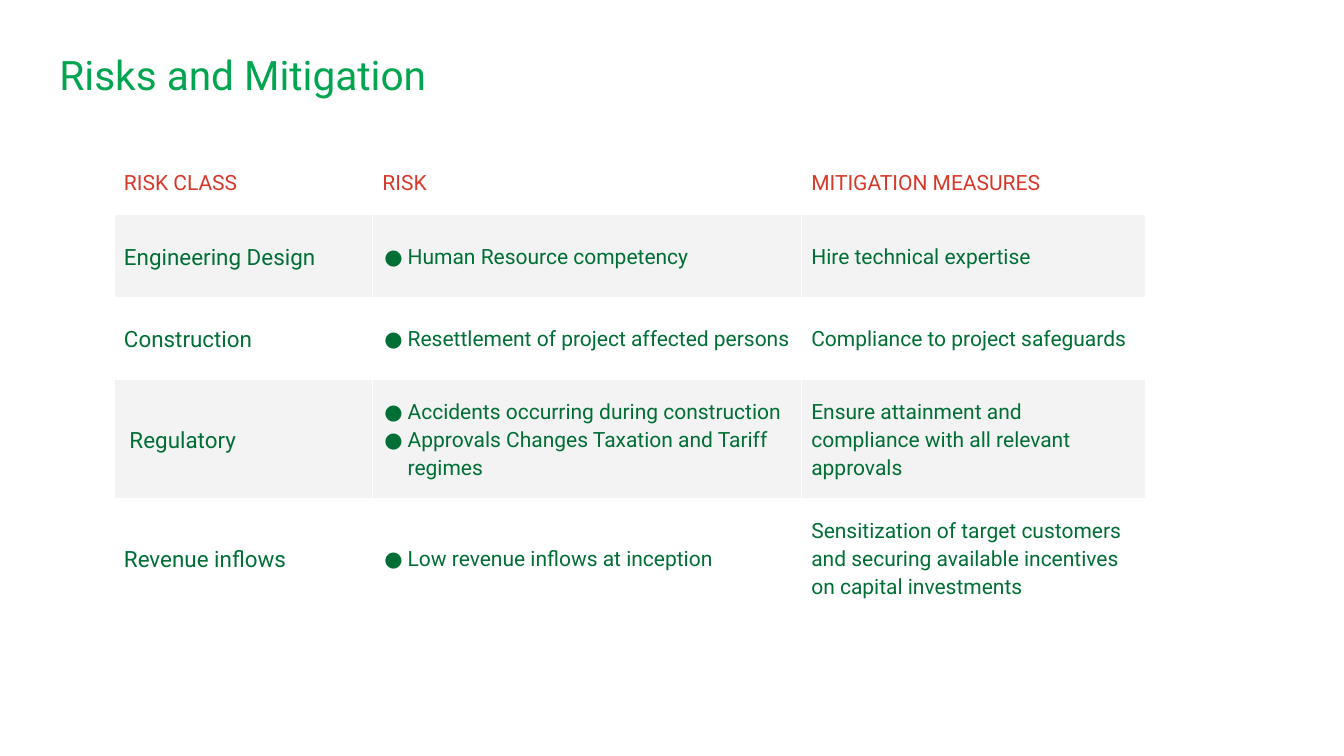
"""Build the Risks and Mitigation slide with its table of risk classes."""
from dataclasses import dataclass

from lxml import etree
from pptx import Presentation
from pptx.dml.color import RGBColor
from pptx.enum.text import MSO_ANCHOR
from pptx.oxml.ns import qn
from pptx.util import Emu, Pt

MIDDLE = MSO_ANCHOR.MIDDLE
BLANK_LAYOUT = 6
EMU_PER_PX = 9144
BULLET = "●"


@dataclass(frozen=True)
class Theme:
    font: str = "Roboto"
    title: str = "00A54F"
    header: str = "D83829"
    body: str = "006F35"
    band: str = "F3F3F3"
    white: str = "FFFFFF"
    title_size: int = 58
    class_size: int = 32
    body_size: int = 30
    border: float = 0.75
    spacing: float = 1.15


@dataclass(frozen=True)
class Risk:
    name: str
    risks: tuple[str, ...]
    mitigation: str
    height: int
    indent: int = 0


THEME = Theme()
HEADERS = ("RISK CLASS", "RISK", "MITIGATION MEASURES")
HEADER_HEIGHT = 131
COL_WIDTHS = (513, 851, 682)
RISKS = (
    Risk("Engineering Design", ("Human Resource competency",),
         "Hire technical expertise", 163),
    Risk("Construction", ("Resettlement of project affected persons",),
         "Compliance to project safeguards", 163),
    Risk("Regulatory",
         ("Accidents occurring during construction",
          "Approvals Changes Taxation and Tariff regimes"),
         "Ensure attainment and compliance with all relevant approvals", 236, indent=11),
    Risk("Revenue inflows", ("Low revenue inflows at inception",),
         "Sensitization of target customers and securing available incentives "
         "on capital investments", 236),
)


def px(n: int) -> Emu:
    return Emu(n * EMU_PER_PX)


def rgb(color: str) -> RGBColor:
    return RGBColor.from_string(color)


def write(p, text: str, *, size: int, color: str, spacing: float = 1.0,
          bullet: bool = False, indent: int = 0) -> None:
    pPr = p._p.get_or_add_pPr()
    if bullet:
        pPr.set("marL", str(px(50)))
        pPr.set("indent", str(px(-46)))
        clr = etree.SubElement(pPr, qn("a:buClr"))
        etree.SubElement(clr, qn("a:srgbClr"), val=color)
        etree.SubElement(pPr, qn("a:buFont"), typeface=THEME.font)
        etree.SubElement(pPr, qn("a:buChar"), char=BULLET)
    elif indent:
        pPr.set("marL", str(px(indent)))
    p.line_spacing = spacing
    r = p.add_run()
    r.text = text
    r.font.name = THEME.font
    r.font.size = Pt(size)
    r.font.color.rgb = rgb(color)


def set_borders(cell) -> None:
    tcPr = cell._tc.get_or_add_tcPr()
    for side in ("lnL", "lnR", "lnT", "lnB"):
        ln = etree.SubElement(tcPr, qn(f"a:{side}"), w=str(Pt(THEME.border)))
        fill = etree.SubElement(ln, qn("a:solidFill"))
        etree.SubElement(fill, qn("a:srgbClr"), val=THEME.white)


def fill_cell(cell, lines: tuple[str, ...], *, fill: str, color: str = THEME.body,
              size: int = THEME.body_size, bullet: bool = False, indent: int = 0) -> None:
    set_borders(cell)
    cell.fill.solid()
    cell.fill.fore_color.rgb = rgb(fill)
    cell.vertical_anchor = MIDDLE
    cell.margin_left = cell.margin_right = px(20)
    cell.margin_top = cell.margin_bottom = px(10)
    tf = cell.text_frame
    for i, line in enumerate(lines):
        p = tf.add_paragraph() if i else tf.paragraphs[0]
        write(p, line, size=size, color=color, spacing=THEME.spacing,
              bullet=bullet, indent=indent)


def add_title(slide, text: str) -> None:
    sp = slide.shapes.add_textbox(px(91), px(63), px(2485), px(167))
    tf = sp.text_frame
    tf.word_wrap = True
    tf.vertical_anchor = MIDDLE
    tf.margin_left = tf.margin_right = tf.margin_top = tf.margin_bottom = px(27)
    write(tf.paragraphs[0], text, size=THEME.title_size, color=THEME.title)


def add_risk_table(slide, risks: tuple[Risk, ...]) -> None:
    heights = (HEADER_HEIGHT, *(risk.height for risk in risks))
    table = slide.shapes.add_table(
        len(heights), len(COL_WIDTHS), px(226), px(295),
        px(sum(COL_WIDTHS)), px(sum(heights))).table
    table.horz_banding = False
    for col, width in zip(table.columns, COL_WIDTHS):
        col.width = px(width)
    for row, height in zip(table.rows, heights):
        row.height = px(height)
    for j, header in enumerate(HEADERS):
        fill_cell(table.cell(0, j), (header,), fill=THEME.white, color=THEME.header)
    for i, risk in enumerate(risks, start=1):
        fill = THEME.band if i % 2 else THEME.white
        fill_cell(table.cell(i, 0), (risk.name,), fill=fill,
                  size=THEME.class_size, indent=risk.indent)
        fill_cell(table.cell(i, 1), risk.risks, fill=fill, bullet=True)
        fill_cell(table.cell(i, 2), (risk.mitigation,), fill=fill)


def main() -> None:
    prs = Presentation()
    prs.slide_width, prs.slide_height = px(2667), px(1500)
    slide = prs.slides.add_slide(prs.slide_layouts[BLANK_LAYOUT])
    add_title(slide, "Risks and Mitigation")
    add_risk_table(slide, RISKS)
    prs.save("out.pptx")


if __name__ == "__main__":
    main()
